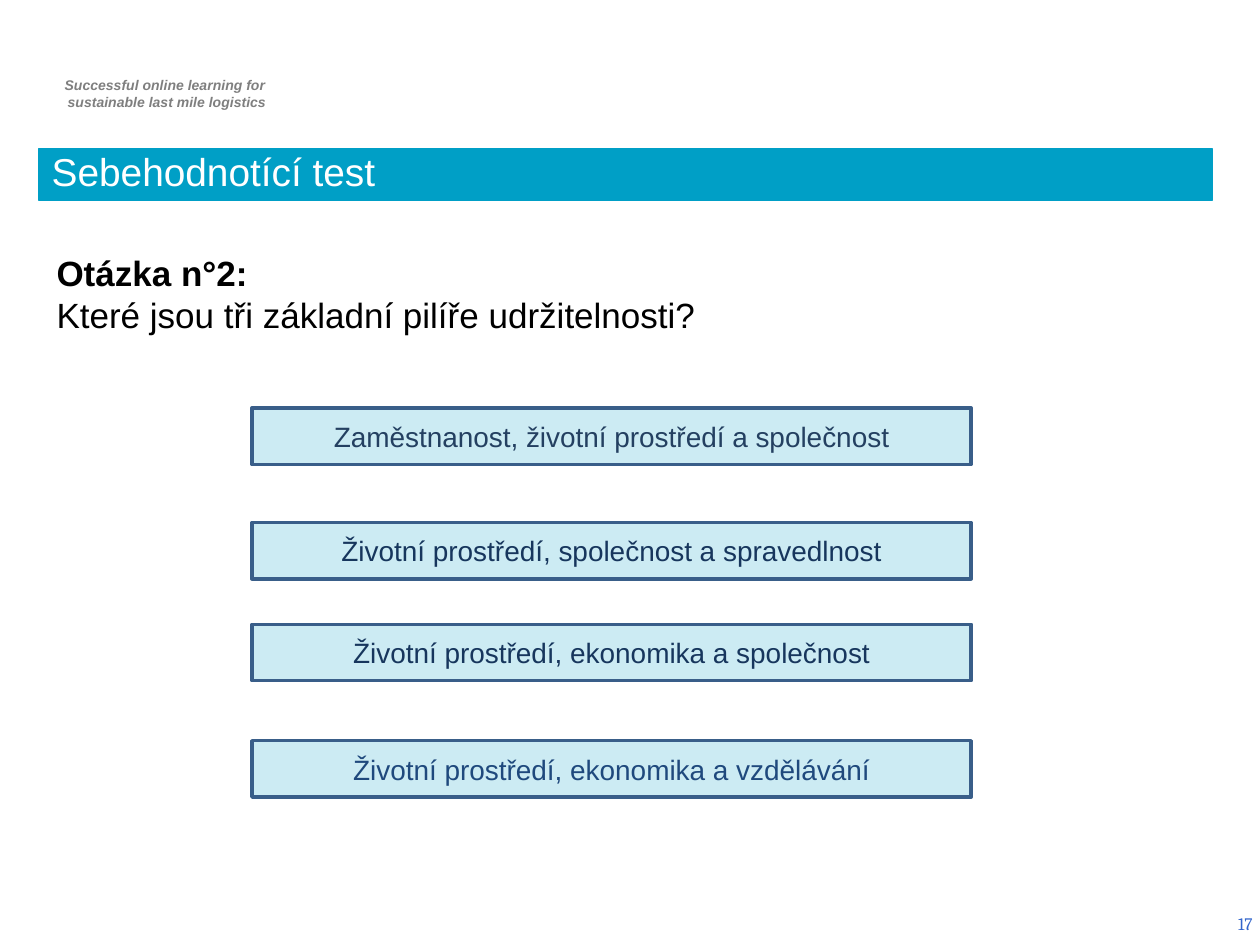
from lxml import etree
from pptx import Presentation
from pptx.dml.color import RGBColor
from pptx.enum import shapes, text
from pptx.oxml import ns
from pptx.util import Pt

COLORS = {
    "accent": "009FC6",
    "border": "395E89",
    "white": "FFFFFF",
    "black": "000000",
    "grey": "7F7F7F",
    "number": "3366CC",
}
ANSWERS = [
    ("Zaměstnanost, životní prostředí a společnost", 233.2, "244061"),
    ("Životní prostředí, společnost a spravedlnost", 298.6, "17365D"),
    ("Životní prostředí, ekonomika a společnost", 356.8, "17365D"),
    ("Životní prostředí, ekonomika a vzdělávání", 423.3, "1F497D"),
]


def rgb(value):
    return RGBColor.from_string(value)


def write(shape, lines, size, color, align=text.PP_ALIGN.LEFT,
          anchor=text.MSO_ANCHOR.TOP, face="Arial"):
    frame = shape.text_frame
    frame.word_wrap = True
    frame.auto_size = text.MSO_AUTO_SIZE.NONE
    frame.vertical_anchor = anchor
    frame.text = "\n".join(lines)
    for para in frame.paragraphs:
        para.alignment = align
        para.font.name = face
        para.font.size = Pt(size)
        para.font.color.rgb = rgb(color)
    return frame.paragraphs


def add_text(page, bounds, lines, size, color, **style):
    box = page.shapes.add_textbox(*map(Pt, bounds))
    return write(box, lines, size, color, **style)


def paint(shape, fill, line, width):
    shape.fill.solid()
    shape.fill.fore_color.rgb = rgb(fill)
    shape.line.color.rgb = rgb(line)
    shape.line.width = Pt(width)


def add_title(page, wording):
    title = page.shapes.title
    title.left, title.top, title.width, title.height = map(Pt, (22.3, 85, 670.3, 29.5))
    paint(title, COLORS["accent"], COLORS["accent"], 0.75)
    paras = write(title, [wording], 22.2, COLORS["white"],
                  anchor=text.MSO_ANCHOR.BOTTOM)
    paras[0].line_spacing = 0.8


def add_answer(page, wording, top, color):
    box = page.shapes.add_shape(shapes.MSO_SHAPE.RECTANGLE,
                                Pt(144), Pt(top), Pt(411), Pt(32.2))
    box.shadow.inherit = False
    paint(box, COLORS["accent"], COLORS["border"], 2)
    tint = box.fill._xPr.find(".//" + ns.qn("a:srgbClr"))
    etree.SubElement(tint, ns.qn("a:alpha"), val="20000")
    write(box, [wording], 16, color, align=text.PP_ALIGN.CENTER,
          anchor=text.MSO_ANCHOR.MIDDLE)


def main():
    deck = Presentation()
    deck.slide_width, deck.slide_height = Pt(720), Pt(540)
    page = deck.slides.add_slide(deck.slide_layouts[5])

    motto = add_text(page, (20.9, 40.3, 146.2, 26.6),
                     ["Successful online learning for ",
                      "sustainable last mile logistics"],
                     8, COLORS["grey"], align=text.PP_ALIGN.CENTER)
    for para in motto:
        para.font.bold = para.font.italic = True
        para._p.get_or_add_pPr().set("marL", str(Pt(2.9)))

    add_title(page, "Sebehodnotící test")
    question = add_text(page, (25.2, 140.4, 670.3, 55.4),
                        ["Otázka n°2:",
                         "Které jsou tři základní pilíře udržitelnosti?"],
                        20, COLORS["black"])
    question[0].font.bold = True

    for wording, top, color in ANSWERS:
        add_answer(page, wording, top, color)

    add_text(page, (555.1, 513.4, 167.8, 28.8), ["17"], 10, COLORS["number"],
             align=text.PP_ALIGN.RIGHT, anchor=text.MSO_ANCHOR.MIDDLE,
             face="Cambria")
    deck.save("out.pptx")


if __name__ == "__main__":
    main()
